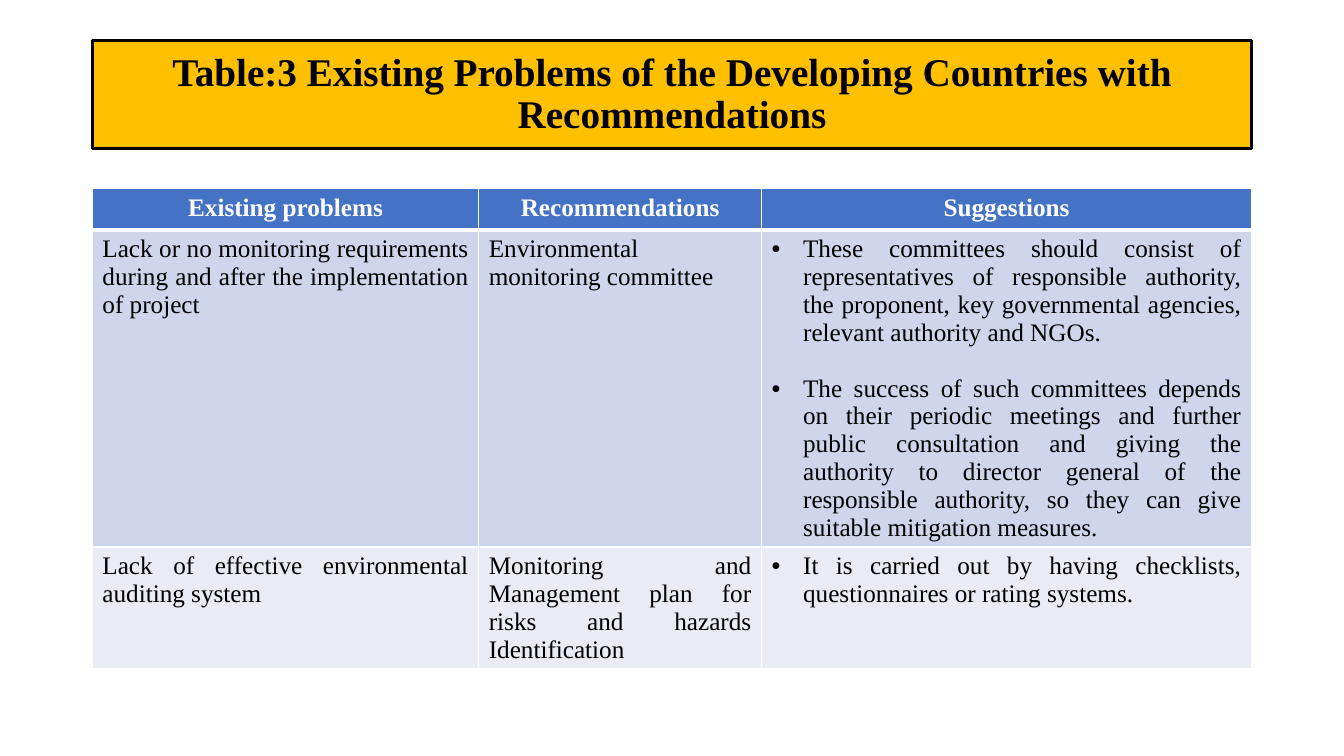
from dataclasses import dataclass

from lxml import etree
from pptx import Presentation
from pptx.dml.color import RGBColor
from pptx.enum import text
from pptx.oxml import ns
from pptx.util import Pt


@dataclass(frozen=True)
class Theme:
    font: str = "Times New Roman"
    title_size: float = 28
    body_size: float = 18
    black: str = "000000"
    white: str = "FFFFFF"
    gold: str = "FFC000"
    header: str = "4472C4"
    bands: tuple = ("CFD5EA", "E9EBF5")


THEME = Theme()
BULLET_INDENT = 22.5
BULLET_GAP = 20

TITLE = "Table:3 Existing Problems of the Developing Countries with Recommendations"
COLUMN_WIDTHS = (276, 202, 350)
ROW_HEIGHTS = (29.5, 226.5, 87)
HEADINGS = ("Existing problems", "Recommendations", "Suggestions")
# Each row: problem, recommendation, list of suggestions
ROWS = (
    ("Lack or no monitoring requirements during and after the implementation of project",
     "Environmental monitoring committee",
     ["These committees should consist of representatives of responsible authority, "
      "the proponent, key governmental agencies, relevant authority and NGOs.",
      "The success of such committees depends on their periodic meetings and further "
      "public consultation and giving the authority to director general of the "
      "responsible authority, so they can give suitable mitigation measures."]),
    ("Lack of effective environmental auditing system",
     "Monitoring and Management plan for risks and hazards Identification",
     ["It is carried out by having checklists, questionnaires or rating systems."]),
)


def rgb(value):
    return RGBColor.from_string(value)


def style_paragraph(paragraph, size, color, bold, alignment):
    paragraph.alignment = alignment
    font = paragraph.font
    font.name, font.size, font.bold = THEME.font, Pt(size), bold
    font.color.rgb = rgb(color)


def add_bullet(paragraph):
    properties = paragraph._p.get_or_add_pPr()
    properties.set("marL", str(Pt(BULLET_INDENT)))
    properties.set("indent", str(-Pt(BULLET_INDENT)))
    bullet_font = etree.Element(ns.qn("a:buFont"), typeface="Arial")
    bullet = etree.Element(ns.qn("a:buChar"), char="•")
    # Bullet settings come before the default run properties
    for element in (bullet_font, bullet):
        properties.find(ns.qn("a:defRPr")).addprevious(element)


def set_borders(cell, bottom_width):
    properties = cell._tc.get_or_add_tcPr()
    widths = {"lnL": 1, "lnR": 1, "lnT": 1, "lnB": bottom_width}
    for index, (side, width) in enumerate(widths.items()):
        line = etree.Element(ns.qn(f"a:{side}"), w=str(Pt(width)))
        fill = etree.SubElement(line, ns.qn("a:solidFill"))
        etree.SubElement(fill, ns.qn("a:srgbClr"), val=THEME.white)
        properties.insert(index, line)


def fill_cell(cell, content, fill, color, bold, alignment, bottom_width=1):
    cell.fill.solid()
    cell.fill.fore_color.rgb = rgb(fill)
    set_borders(cell, bottom_width)
    bulleted = isinstance(content, list)
    lines = content if bulleted else [content]
    frame = cell.text_frame
    for index, line in enumerate(lines):
        paragraph = frame.add_paragraph() if index else frame.paragraphs[0]
        paragraph.text = line
        style_paragraph(paragraph, THEME.body_size, color, bold, alignment)
        if index:
            paragraph.space_before = Pt(BULLET_GAP)
        if bulleted:
            add_bullet(paragraph)


def place_title(slide, left, top, width, height):
    title = slide.shapes.title
    title.left, title.top = Pt(left), Pt(top)
    title.width, title.height = Pt(width), Pt(height)
    title.fill.solid()
    title.fill.fore_color.rgb = rgb(THEME.gold)
    title.line.color.rgb = rgb(THEME.black)
    title.line.width = Pt(2.25)
    frame = title.text_frame
    frame.vertical_anchor = text.MSO_ANCHOR.MIDDLE
    frame.text = TITLE
    paragraph = frame.paragraphs[0]
    style_paragraph(paragraph, THEME.title_size, THEME.black, True, text.PP_ALIGN.CENTER)
    paragraph.line_spacing = 0.9


def place_table(slide, left, top, width, height):
    table = slide.shapes.add_table(len(ROW_HEIGHTS), len(COLUMN_WIDTHS),
                                   Pt(left), Pt(top), Pt(width), Pt(height)).table
    for column, share in zip(table.columns, COLUMN_WIDTHS):
        column.width = Pt(width * share / sum(COLUMN_WIDTHS))
    for row, share in zip(table.rows, ROW_HEIGHTS):
        row.height = Pt(height * share / sum(ROW_HEIGHTS))

    # Heading row
    for cell, heading in zip(table.rows[0].cells, HEADINGS):
        fill_cell(cell, heading, THEME.header, THEME.white, True,
                  text.PP_ALIGN.CENTER, bottom_width=3)

    # Banded body rows
    for index, contents in enumerate(ROWS):
        for cell, content in zip(table.rows[index + 1].cells, contents):
            fill_cell(cell, content, THEME.bands[index % 2], THEME.black, False,
                      text.PP_ALIGN.JUSTIFY)


def main():
    presentation = Presentation()
    presentation.slide_width, presentation.slide_height = Pt(960), Pt(540)
    slide = presentation.slides.add_slide(presentation.slide_layouts[5])
    place_title(slide, 66, 29, 828, 77)
    place_table(slide, 66, 134.75, sum(COLUMN_WIDTHS), sum(ROW_HEIGHTS))
    presentation.save("out.pptx")


if __name__ == "__main__":
    main()
